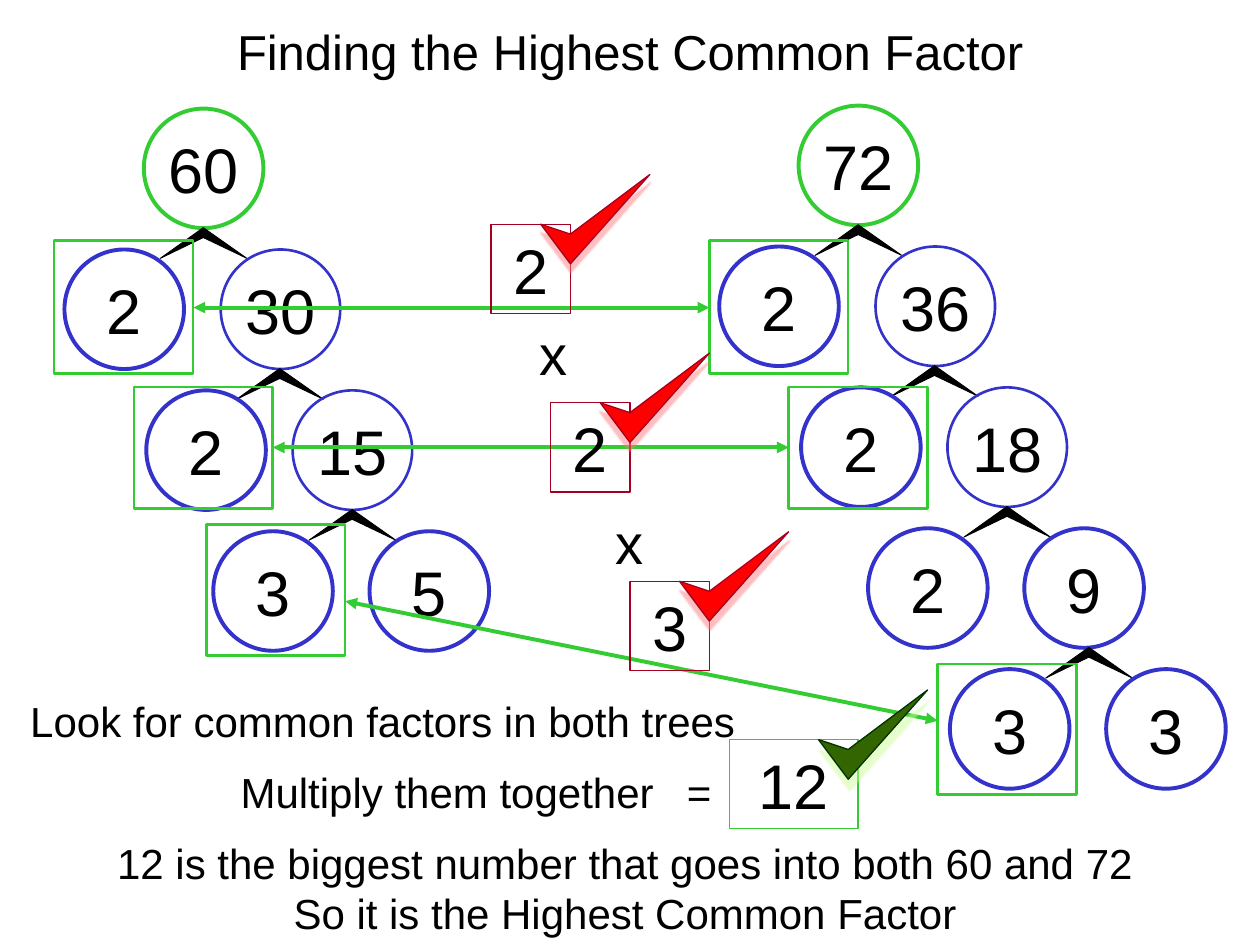
from dataclasses import dataclass

from lxml.etree import SubElement
from pptx import Presentation
from pptx.dml.color import RGBColor
from pptx.enum.shapes import MSO_CONNECTOR, MSO_SHAPE
from pptx.enum.text import MSO_ANCHOR, MSO_AUTO_SIZE, PP_ALIGN
from pptx.oxml.ns import qn
from pptx.util import Cm, Pt


@dataclass(frozen=True)
class Theme:
    font: str = "Arial"
    ink: str = "000000"
    green: str = "33CC33"
    blue: str = "3333CC"
    crimson: str = "A50021"
    red: str = "FF0000"
    pink: str = "FF7C80"
    forest: str = "336600"
    dark_green: str = "003300"
    lime: str = "CCFF99"
    title: int = 28
    body: int = 24
    number: int = 36
    times: int = 32


def fill_text(frame, *lines, font, size, color, align=PP_ALIGN.LEFT,
              anchor=MSO_ANCHOR.TOP, wrap=False):
    """Fill a text frame with one formatted paragraph per line."""
    frame.word_wrap = wrap
    frame.auto_size = MSO_AUTO_SIZE.NONE
    frame.vertical_anchor = anchor
    for index, line in enumerate(lines):
        para = frame.add_paragraph() if index else frame.paragraphs[0]
        para.alignment = align
        span = para.add_run()
        span.text = line
        span.font.name = font
        span.font.size = Pt(size)
        span.font.color.rgb = RGBColor.from_string(color)


class FactorPage:
    """Holds the theme and the current slide; all lengths are centimetres."""

    CIRCLE = 2.41

    def __init__(self, page, theme):
        self.page = page
        self.theme = theme

    def style(self, shape, line, weight, fill=None):
        shape.shadow.inherit = False
        if fill:
            shape.fill.solid()
            shape.fill.fore_color.rgb = RGBColor.from_string(fill)
        else:
            shape.fill.background()
        shape.line.color.rgb = RGBColor.from_string(line)
        shape.line.width = Pt(weight)

    def caption(self, shape, *lines, size, **options):
        fill_text(shape.text_frame, *lines, font=self.theme.font, size=size,
                  color=self.theme.ink, **options)

    def title(self, text, left, top, width, height):
        box = self.page.shapes.title
        box.left, box.top, box.width, box.height = map(Cm, (left, top, width, height))
        self.caption(box, text, size=self.theme.title, align=PP_ALIGN.CENTER,
                     anchor=MSO_ANCHOR.MIDDLE)

    def label(self, *lines, at, size, align=PP_ALIGN.LEFT):
        box = self.page.shapes.add_textbox(*map(Cm, at))
        self.caption(box, *lines, size=size, align=align)

    def outline(self, kind, at, line, weight, text=None):
        shape = self.page.shapes.add_shape(kind, *map(Cm, at))
        self.style(shape, line, weight)
        if text:
            self.caption(shape, text, size=self.theme.number,
                         align=PP_ALIGN.CENTER, anchor=MSO_ANCHOR.MIDDLE)

    def polygon(self, left, top, offsets, fill, line, weight):
        points = [(Cm(left + x), Cm(top + y)) for x, y in offsets]
        builder = self.page.shapes.build_freeform(*points[0])
        builder.add_line_segments(points[1:], close=True)
        shape = builder.convert_to_shape()
        self.style(shape, line, weight, fill)
        return shape

    def circle(self, number, left, top, line, weight):
        self.outline(MSO_SHAPE.OVAL, (left, top, self.CIRCLE, self.CIRCLE),
                     line, weight, number)

    def branch(self, left, top):
        ink = self.theme.ink
        self.polygon(left, top, [(0.87, 0), (0, 0.62), (0.87, 0.2), (1.75, 0.62)],
                     ink, ink, 0.5)

    def tree(self, left, top, root, levels):
        """Draw a root and its levels; each level is (numbers, line weights)."""
        self.circle(root, left, top, self.theme.green, 2.25)
        for depth, (numbers, weights) in enumerate(levels):
            x, gap = LEVEL_LEFT[depth]
            y = top + LEVEL_STEP * (depth + 1)
            self.branch(left + BRANCH_LEFT[depth], y - 0.44)
            for index, (number, weight) in enumerate(zip(numbers, weights)):
                self.circle(number, left + x + index * gap, y,
                            self.theme.blue, weight)

    def arrow(self, start, end):
        line = self.page.shapes.add_connector(
            MSO_CONNECTOR.STRAIGHT, *map(Cm, (*start, *end)))
        line.line.color.rgb = RGBColor.from_string(self.theme.green)
        line.line.width = Pt(2.25)
        properties = line._element.spPr
        for tag in ("a:headEnd", "a:tailEnd"):
            SubElement(properties.find(qn("a:ln")), qn(tag), type="triangle")
        SubElement(properties, qn("a:effectLst"))

    def match(self, first, second, start, end):
        for frame in (first, second):
            self.outline(MSO_SHAPE.RECTANGLE, frame, self.theme.green, 1.5)
        self.arrow(start, end)

    def tick(self, left, top, fill, line, glow, distance, angle):
        shape = self.polygon(left, top, [(0, 0), (0.6, 0.8), (2.2, -1), (0.6, 0.2)],
                             fill, line, 0.75)
        effects = shape._element.spPr.find(qn("a:effectLst"))
        shadow = SubElement(effects, qn("a:outerShdw"), blurRad=str(int(Pt(1))),
                            dist=str(int(Pt(distance))), dir=str(angle * 60000),
                            algn="ctr", rotWithShape="0")
        color = SubElement(shadow, qn("a:srgbClr"), val=glow)
        SubElement(color, qn("a:alpha"), val="50000")

    def factor(self, number, left, top):
        theme = self.theme
        self.outline(MSO_SHAPE.RECTANGLE, (left, top, 1.6, 1.8),
                     theme.crimson, 0.75, number)
        self.tick(left + 1, top, theme.red, theme.crimson, theme.pink, 5, 90)

    def result(self, number, left, top):
        theme = self.theme
        self.outline(MSO_SHAPE.RECTANGLE, (left, top, 2.6, 1.8),
                     theme.green, 0.75, number)
        self.tick(left + 1.8, top, theme.forest, theme.dark_green, theme.lime, 6.1, 81)


# Tree geometry, measured from the root circle
LEVEL_STEP = 2.84
LEVEL_LEFT = [(-1.6, 3.15), (0.05, 2.95), (1.4, 3.15), (3.05, 3.15)]
BRANCH_LEFT = [0.33, 1.87, 3.33, 4.98]
SPLIT, FINAL = (2.25, 1.5), (2.25, 2.25)


def main():
    deck = Presentation()
    deck.slide_width, deck.slide_height = Cm(25.4), Cm(19.05)
    theme = Theme()
    page = FactorPage(deck.slides.add_slide(deck.slide_layouts[5]), theme)
    page.title("Finding the Highest Common Factor", 4.5, 0.3, 16.4, 1.45)

    # Factor trees
    page.tree(16.1, 2.13, "72", [(("2", "36"), SPLIT), (("2", "18"), SPLIT),
                                 (("2", "9"), FINAL), (("3", "3"), FINAL)])
    page.tree(2.9, 2.19, "60", [(("2", "30"), SPLIT), (("2", "15"), SPLIT),
                                (("3", "5"), FINAL)])

    # Factors shared by both trees
    page.match((1.09, 4.85, 2.8, 2.68), (14.3, 4.85, 2.8, 2.68),
               (3.9, 6.2), (14.3, 6.2))
    page.match((2.7, 7.8, 2.8, 2.45), (15.9, 7.8, 2.8, 2.45),
               (5.5, 9.02), (15.9, 9.02))
    page.match((4.16, 10.58, 2.8, 2.63), (18.9, 13.39, 2.8, 2.63),
               (6.96, 12.12), (18.9, 14.53))

    # Product of the common factors
    for number, left, top in (("2", 9.9, 4.52), ("2", 11.1, 8.12), ("3", 12.7, 11.72)):
        page.factor(number, left, top)
    for left, top in ((10.62, 6.32), (12.16, 10.13)):
        page.label("x", at=(left, top, 1.07, 1.6), size=theme.times)
    page.result("12", 14.7, 14.91)

    # Explanations
    page.label("Look for common factors in both trees",
               at=(0.36, 13.9, 14.96, 1.27), size=theme.body)
    page.label("Multiply them together", at=(4.6, 15.32, 8.9, 1.27), size=theme.body)
    page.label("=", at=(13.6, 15.32, 1, 1.27), size=theme.body)
    page.label("12 is the biggest number that goes into both 60 and 72",
               "So it is the Highest Common Factor",
               at=(2.1, 16.76, 21, 2.29), size=theme.body, align=PP_ALIGN.CENTER)

    deck.save("out.pptx")


if __name__ == "__main__":
    main()
